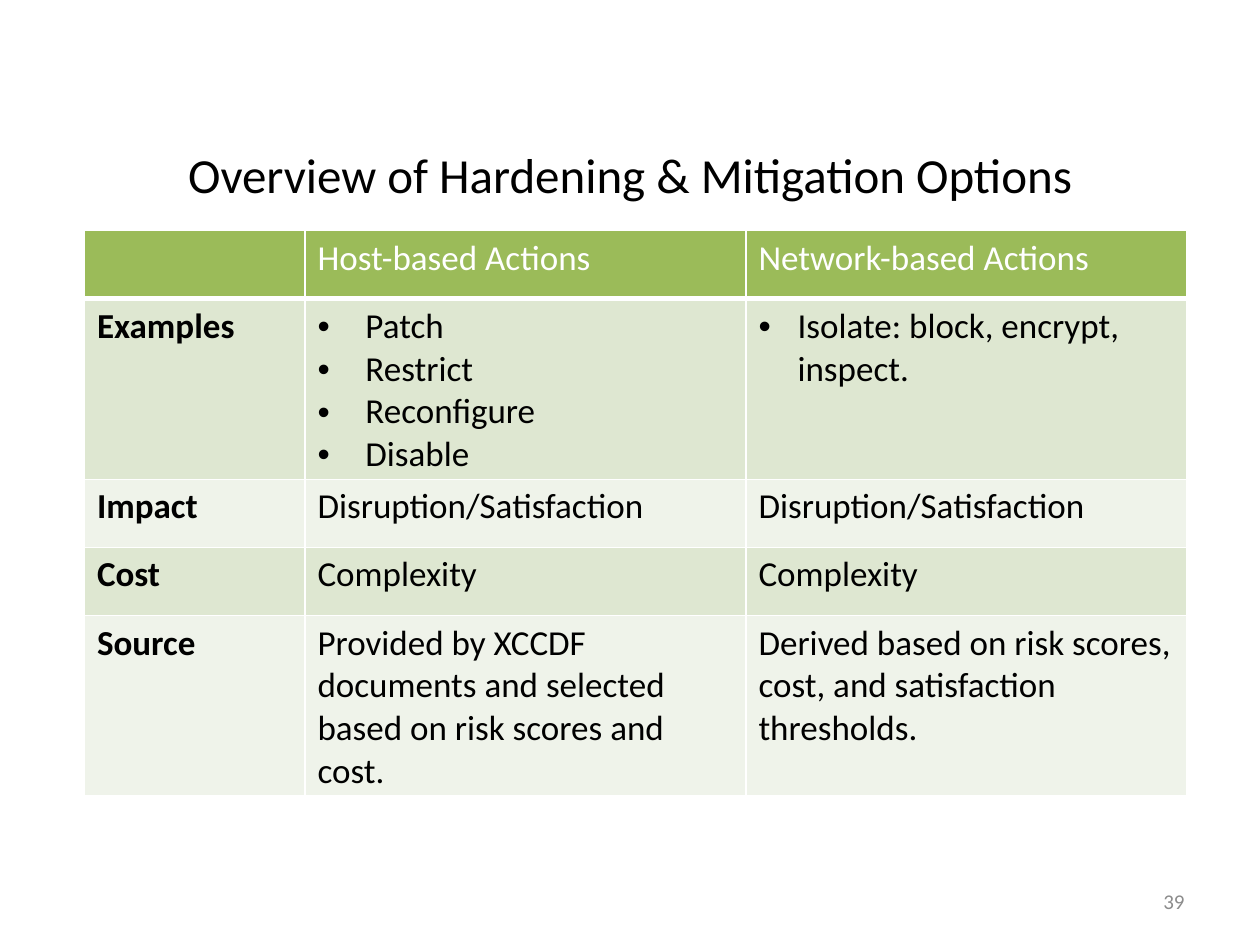
import pptx
import pptx.util
import pptx.dml.color
import pptx.enum.text
import pptx.oxml
import pptx.oxml.ns

RGB = pptx.dml.color.RGBColor
ALIGN = pptx.enum.text.PP_ALIGN
ANCHOR = pptx.enum.text.MSO_ANCHOR
BLACK = RGB(0x00, 0x00, 0x00)
WHITE = RGB(0xFF, 0xFF, 0xFF)
GREY = RGB(0x8C, 0x8C, 0x8C)
GREEN = RGB(0x9B, 0xBB, 0x59)
DARK = RGB(0xDE, 0xE7, 0xD1)
LIGHT = RGB(0xEF, 0xF3, 0xEA)

COLS = [175, 350, 350]
ROWS = [54, 129, 54, 54, 129]
CELLS = [
    ["", "Host-based Actions", "Network-based Actions"],
    ["Examples", ["Patch", "Restrict", "Reconfigure", "Disable"],
     ["Isolate: block, encrypt, inspect."]],
    ["Impact", "Disruption/Satisfaction", "Disruption/Satisfaction"],
    ["Cost", "Complexity", "Complexity"],
    ["Source",
     "Provided by XCCDF documents and selected based on risk scores and cost.",
     "Derived based on risk scores, cost, and satisfaction thresholds."],
]
INDENTS = [0, 38, 31]


def px(n):
    return pptx.util.Emu(n * 9144)


def style(para, size, color, bold=False):
    look = {"name": "Calibri", "size": pptx.util.Pt(size), "bold": bold}
    for run in para.runs:
        for key, value in look.items():
            setattr(run.font, key, value)
        run.font.color.rgb = color


def label(slide, box, text, size, color, align, anchor, top):
    frame = slide.shapes.add_textbox(*map(px, box)).text_frame
    form = {"word_wrap": True, "vertical_anchor": anchor, "margin_top": px(top)}
    for key, value in form.items():
        setattr(frame, key, value)
    para = frame.paragraphs[0]
    para.text, para.alignment = text, align
    style(para, size, color)


def bullet(para, indent):
    props = para._p.get_or_add_pPr()
    props.set("marL", str(px(indent)))
    props.set("indent", str(-px(indent)))
    for tag, key, value in (("buFont", "typeface", "Arial"), ("buChar", "char", "•")):
        node = pptx.oxml.parse_xml(
            f'<a:{tag} {pptx.oxml.ns.nsdecls("a")} {key}="{value}"/>')
        props.append(node)


def border(cell, head):
    props = cell._tc.get_or_add_tcPr()
    for spot, side in enumerate("LRTB"):
        width = pptx.util.Pt(3 if head and side == "B" else 1)
        line = pptx.oxml.parse_xml(
            f'<a:ln{side} {pptx.oxml.ns.nsdecls("a")} w="{width}">'
            f'<a:solidFill><a:srgbClr val="{WHITE}"/></a:solidFill></a:ln{side}>')
        props.insert(spot, line)


def fill(cell, data, row, col):
    head = row == 0
    cell.fill.solid()
    cell.fill.fore_color.rgb = GREEN if head else DARK if row % 2 else LIGHT
    border(cell, head)
    items = data if isinstance(data, list) else [data]
    frame = cell.text_frame
    frame.text = "\n".join(items)
    for para in frame.paragraphs:
        if isinstance(data, list):
            bullet(para, INDENTS[col])
        style(para, 20, WHITE if head else BLACK, col == 0)


def grid(slide, box):
    frame = slide.shapes.add_table(len(ROWS), len(COLS), *map(px, box))
    table = frame.table
    for flag in ("first_row", "horz_banding"):
        setattr(table, flag, False)
    for col, width in zip(table.columns, COLS):
        col.width = px(width)
    for row, height in zip(table.rows, ROWS):
        row.height = px(height)
    for r, line in enumerate(CELLS):
        for c, data in enumerate(line):
            fill(table.cell(r, c), data, r, c)


def main():
    deck = pptx.Presentation()
    deck.slide_width, deck.slide_height = px(1000), px(750)
    slide = deck.slides.add_slide(deck.slide_layouts[6])
    label(slide, (50, 108, 900, 47), "Overview of Hardening & Mitigation Options",
          28, BLACK, ALIGN.CENTER, ANCHOR.TOP, 7)
    grid(slide, (67, 183, sum(COLS), sum(ROWS)))
    label(slide, (717, 695, 233, 40), "39", 12, GREY, ALIGN.RIGHT, ANCHOR.MIDDLE, 5)
    deck.save("out.pptx")


if __name__ == "__main__":
    main()
